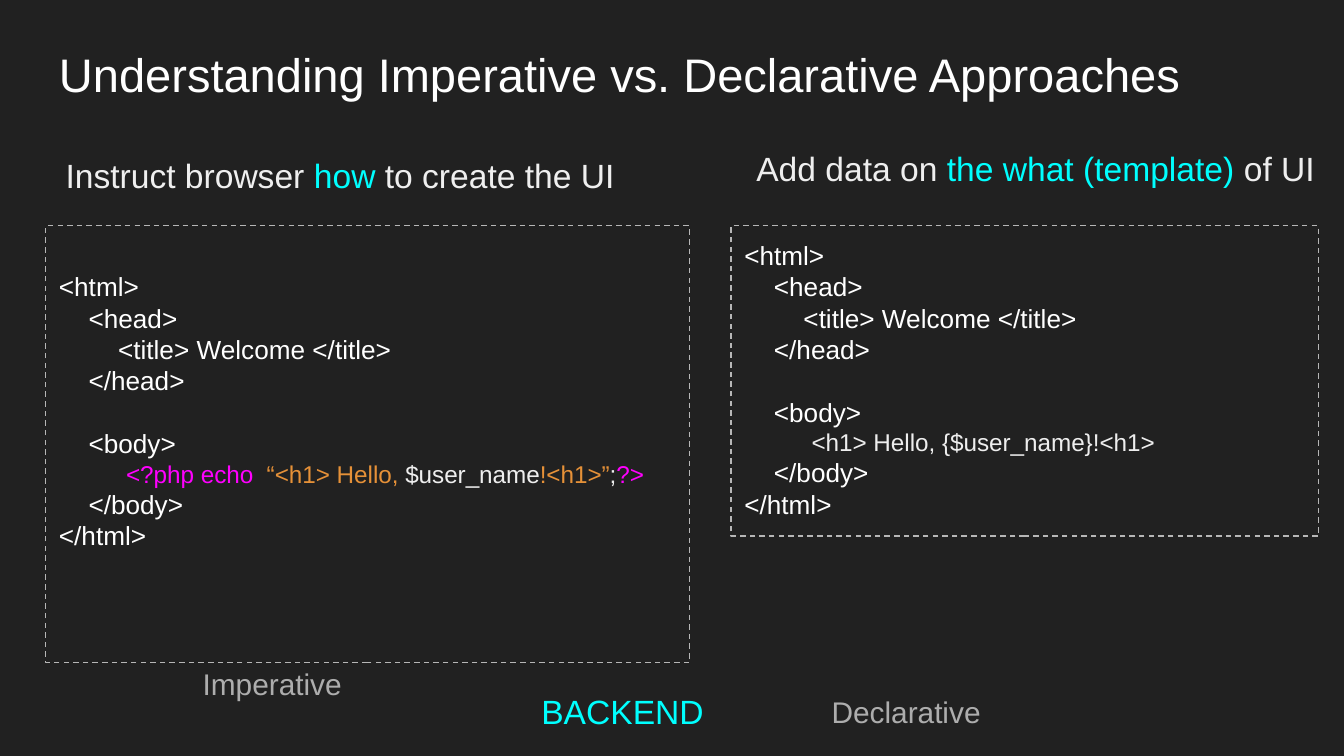
from pptx import Presentation
from pptx.dml.color import RGBColor
from pptx.enum.dml import MSO_LINE
from pptx.enum.shapes import MSO_SHAPE
from pptx.enum.text import MSO_ANCHOR, PP_ALIGN
from pptx.util import Inches, Pt

COLORS = {
    "back": "212121", "white": "FFFFFF", "light": "EEEEEE", "soft": "EFEFEF",
    "gray": "ADADAD", "line": "B7B7B7", "cyan": "00FFFF", "pink": "FF00FF",
    "orange": "E69138",
}
STEP = 0.216  # indent of one code level, in inches
STEP = round(STEP, 2)
GAP = Pt(16.8)  # one code line

HEAD = [
    (0, "<html>"),
    (1, "<head>"),
    (2, "<title> Welcome </title>"),
    (1, "</head>"),
    (1, "<body>"),
]
TAIL = [(1, "</body>"), (0, "</html>")]
ECHO = [
    ("<?php echo  ", "pink"), ("“<h1> Hello, ", "orange"),
    ("$user_name", "light"), ("!<h1>”", "orange"),
    (";", "light"), ("?>", "pink"),
]
HELLO = [("<h1> Hello, {$user_name}!<h1>", "light")]


def color(name):
    return RGBColor.from_string(COLORS[name])


def add_runs(para, runs, size):
    for text, tint in runs:
        run = para.add_run()
        run.text = text
        run.font.name = "Arial"
        run.font.size = Pt(size)
        run.font.color.rgb = color(tint)


def set_frame(frame, top=0.1):
    frame.word_wrap = True
    frame.vertical_anchor = MSO_ANCHOR.TOP
    frame.margin_left = frame.margin_right = frame.margin_bottom = Inches(0.1)
    frame.margin_top = Inches(top)


def add_label(slide, box, runs, size, align=PP_ALIGN.LEFT):
    frame = slide.shapes.add_textbox(*map(Inches, box)).text_frame
    set_frame(frame)
    para = frame.paragraphs[0]
    para.alignment = align
    add_runs(para, runs, size)


def add_code(slide, box, body, top=0.1):
    """Draw a dashed box with the page code around the given body line."""
    shape = slide.shapes.add_shape(MSO_SHAPE.RECTANGLE, *map(Inches, box))
    shape.shadow.inherit = False
    shape.fill.background()
    shape.line.color.rgb = color("line")
    shape.line.width = Pt(0.75)
    shape.line.dash_style = MSO_LINE.DASH
    frame = shape.text_frame
    set_frame(frame, top)

    head, tail = (
        [(level * STEP, [(text, "white")], 14) for level, text in part]
        for part in (HEAD, TAIL)
    )
    lines = head + [(0.5, body, 13)] + tail
    for row, (left, runs, size) in enumerate(lines):
        para = frame.add_paragraph() if row else frame.paragraphs[0]
        para.alignment = PP_ALIGN.LEFT
        # python-pptx has no public paragraph indent
        props = para._p.get_or_add_pPr()
        props.set("marL", str(Inches(left)))
        props.set("indent", "0")
        if row == len(head) - 1:
            para.space_before = GAP
        add_runs(para, runs, size)


def main():
    deck = Presentation()
    deck.slide_width = Inches(10)
    deck.slide_height = deck.slide_width * 9 // 16
    slide = deck.slides.add_slide(deck.slide_layouts[6])
    slide.background.fill.solid()
    slide.background.fill.fore_color.rgb = color("back")

    title = "Understanding Imperative vs. Declarative Approaches"
    add_label(slide, (0.34, 0.24, 9.32, 0.63), [(title, "white")], 25.2)

    add_code(slide, (5.44, 1.68, 4.37, 2.31), HELLO)
    add_label(slide, (6.09, 5.06, 1.76, 0.48), [("Declarative", "gray")], 16)
    add_code(slide, (0.34, 1.68, 4.79, 3.25), ECHO, top=0.1 + GAP.inches)
    add_label(slide, (1.41, 4.85, 1.6, 0.48), [("Imperative", "gray")], 16)

    what = [("Add data on", "light"), (" the what (template) ", "cyan"),
            ("of UI", "light")]
    add_label(slide, (5.38, 1, 4.65, 0.63), what, 18, PP_ALIGN.CENTER)
    how = [("Instruct browser ", "soft"), ("how", "cyan"),
           (" to create the UI", "soft")]
    add_label(slide, (0.39, 1.05, 4.33, 0.53), how, 18)
    add_label(slide, (3.93, 5.04, 1.6, 0.48), [("BACKEND", "cyan")], 18)

    deck.save("out.pptx")


if __name__ == "__main__":
    main()
